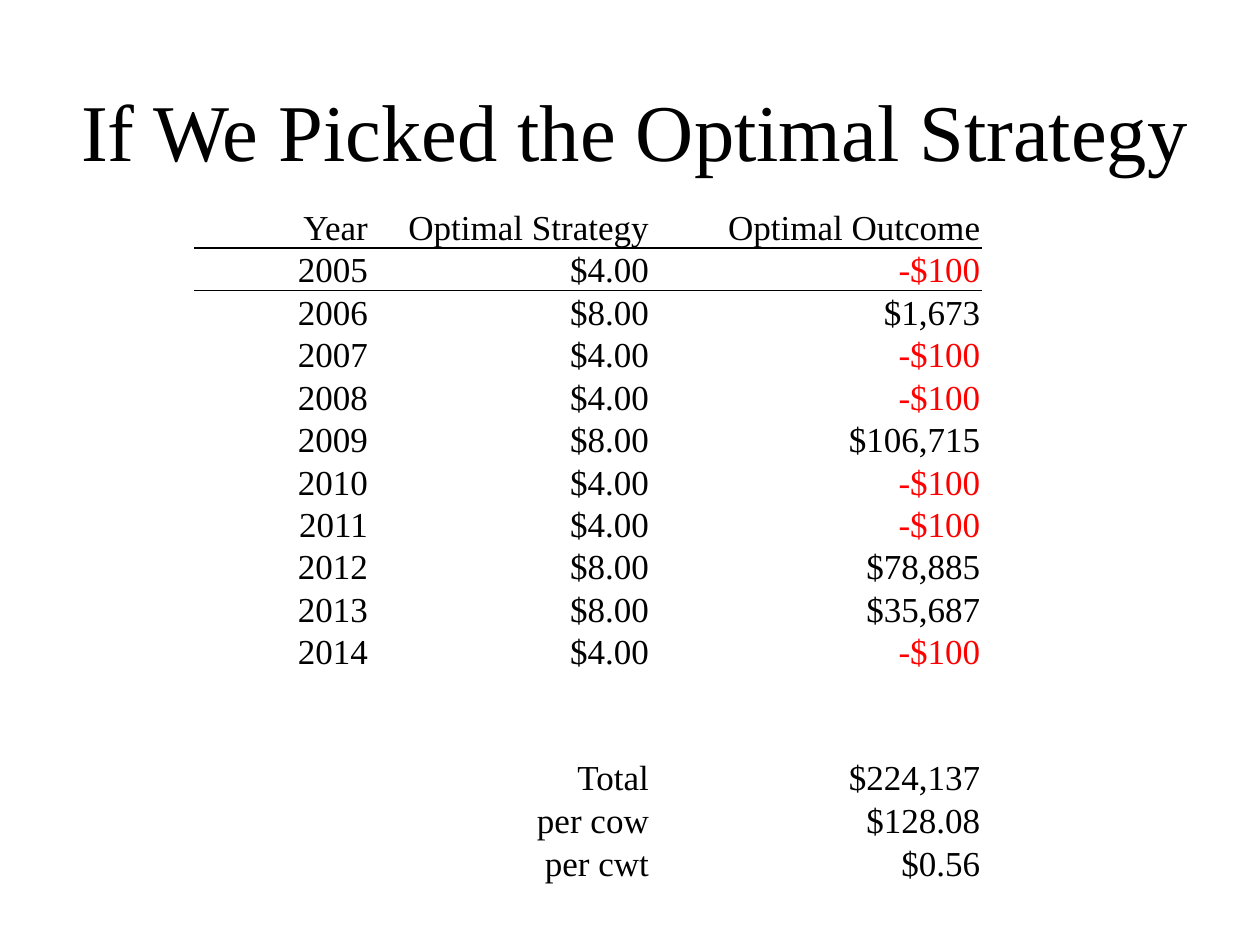
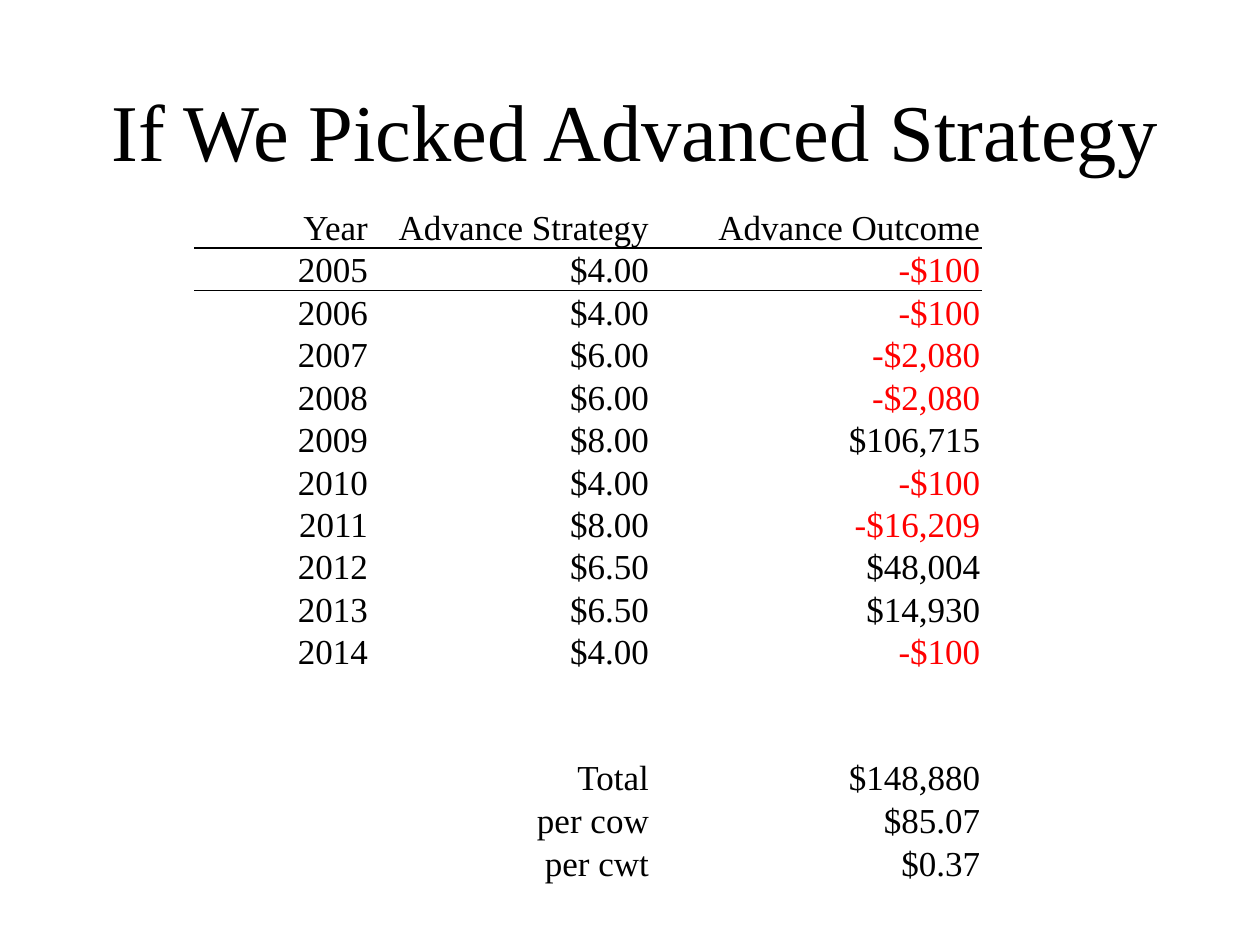
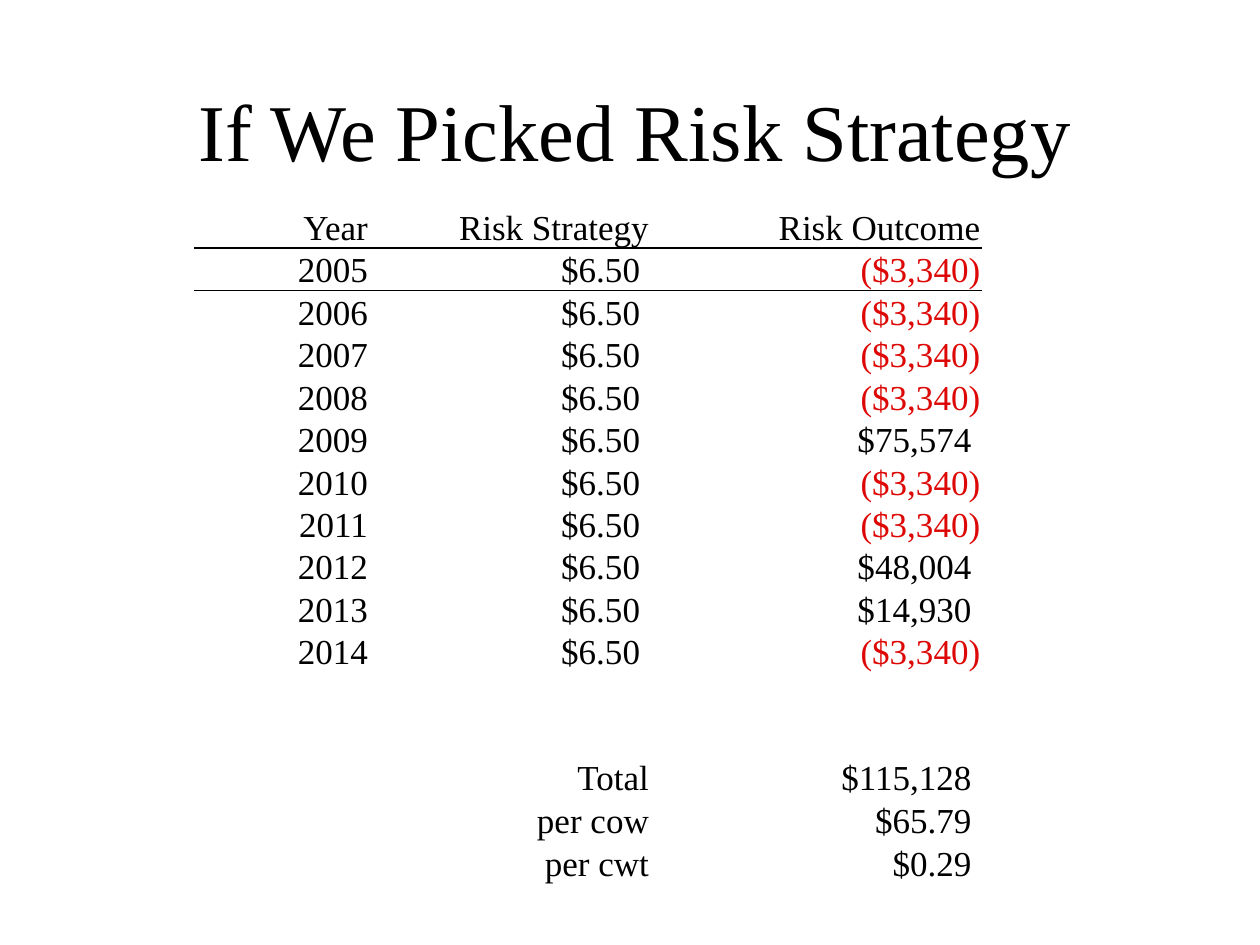
"""Build three slides that compare the yearly outcomes of pricing strategies."""
from dataclasses import dataclass

from lxml.etree import SubElement
from pptx import Presentation
from pptx.dml.color import RGBColor
from pptx.enum.text import MSO_ANCHOR as Anchor, PP_ALIGN as Align
from pptx.oxml.ns import qn
from pptx.slide import Slide
from pptx.table import _Cell as Cell
from pptx.text.text import _Paragraph as Paragraph
from pptx.util import Inches, Pt


@dataclass(frozen=True)
class Theme:
    font: str = "Times New Roman"
    ink: str = "000000"
    loss: str = "FF0000"
    accounting_loss: str = "DD0806"
    title_size: int = 46
    table_size: int = 20
    rule_width: int = 1
    plain_table_style: str = "{2D5ABB26-0587-4C30-8999-92F81FD0307C}"


@dataclass(frozen=True)
class Strategy:
    title: str
    name: str
    prices: tuple[float, ...]
    outcomes: tuple[int, ...]
    total: int
    per_cow: float
    per_cwt: float
    accounting: bool = False


@dataclass(frozen=True)
class Entry:
    text: str = ""
    color: str = Theme.ink
    padded: bool = False


THEME = Theme()
FIRST_YEAR = 2005
COLUMN_WIDTHS = (1.39, 2.23, 2.63)
ROW_HEIGHTS = (0.3,) * 11 + (0.33,) * 2 + (0.3,) + (0.34,) * 2
MARGINS = {
    "margin_left": Inches(0.01),
    "margin_right": Inches(0.01),
    "margin_top": Pt(0.25),
    "margin_bottom": Inches(0),
}
PADDED_RIGHT = Inches(0.08)

STRATEGIES = (
    Strategy(
        "If We Picked the Optimal Strategy", "Optimal",
        (4, 8, 4, 4, 8, 4, 4, 8, 8, 4),
        (-100, 1673, -100, -100, 106715, -100, -100, 78885, 35687, -100),
        224137, 128.08, 0.56,
    ),
    Strategy(
        "If We Picked Advanced Strategy", "Advance",
        (4, 4, 6, 6, 8, 4, 8, 6.5, 6.5, 4),
        (-100, -100, -2080, -2080, 106715, -100, -16209, 48004, 14930, -100),
        148880, 85.07, 0.37,
    ),
    Strategy(
        "If We Picked Risk Strategy", "Risk",
        (6.5,) * 10,
        (-3340, -3340, -3340, -3340, 75574, -3340, -3340, 48004, 14930, -3340),
        115128, 65.79, 0.29, accounting=True,
    ),
)


def write_text(paragraph: Paragraph, text: str, size: int, color: str, align: Align) -> None:
    """Add one aligned run in the theme font."""
    paragraph.alignment = align
    run = paragraph.add_run()
    run.text = text
    for name, value in {"name": THEME.font, "size": Pt(size)}.items():
        setattr(run.font, name, value)
    run.font.color.rgb = RGBColor.from_string(color)


def add_title(slide: Slide, text: str) -> None:
    """Add the centred slide title."""
    frame = slide.shapes.add_textbox(Inches(0.24), Inches(0.55), Inches(9.59), Inches(0.95)).text_frame
    for name, value in {"word_wrap": True, "vertical_anchor": Anchor.MIDDLE}.items():
        setattr(frame, name, value)
    write_text(frame.paragraphs[0], text, THEME.title_size, THEME.ink, Align.CENTER)


def money(value: float, decimals: int, strategy: Strategy) -> Entry:
    """Format an amount, with losses in red and in the strategy's own notation."""
    amount = f"${abs(value):,.{decimals}f}"
    if value >= 0:
        return Entry(amount, padded=strategy.accounting)
    if strategy.accounting:
        return Entry(f"({amount})", THEME.accounting_loss)
    return Entry(f"-{amount}", THEME.loss)


def table_rows(strategy: Strategy) -> list[list[Entry]]:
    """Lay out the header, the years, a gap and the totals."""
    header = [Entry("Year"), Entry(f"{strategy.name} Strategy"), Entry(f"{strategy.name} Outcome")]
    years = [
        [Entry(str(year)), money(price, 2, strategy), money(outcome, 0, strategy)]
        for year, (price, outcome) in enumerate(zip(strategy.prices, strategy.outcomes), FIRST_YEAR)
    ]
    gap = [[Entry()] * 3] * 2
    totals = [
        [Entry(), Entry(label), money(value, decimals, strategy)]
        for label, value, decimals in (
            ("Total", strategy.total, 0),
            ("per cow", strategy.per_cow, 2),
            ("per cwt", strategy.per_cwt, 2),
        )
    ]
    return [header, *years, *gap, *totals]


def add_border(cell: Cell, tag: str) -> None:
    """Draw a rule on one side of a cell."""
    properties = cell._tc.get_or_add_tcPr()
    line = SubElement(properties, qn(tag), w=str(Pt(THEME.rule_width)))
    fill = SubElement(line, qn("a:solidFill"))
    SubElement(fill, qn("a:srgbClr"), val=THEME.ink)
    properties.insert(0, line)


def fill_cell(cell: Cell, entry: Entry) -> None:
    """Format a cell and write its entry."""
    for name, value in MARGINS.items():
        setattr(cell, name, value)
    if entry.padded:
        cell.margin_right = PADDED_RIGHT
    cell.vertical_anchor = Anchor.BOTTOM
    cell.fill.background()
    if entry.text:
        write_text(cell.text_frame.paragraphs[0], entry.text, THEME.table_size, entry.color, Align.RIGHT)


def add_outcome_table(slide: Slide, strategy: Strategy) -> None:
    """Add the table of yearly prices and outcomes."""
    rows = table_rows(strategy)
    table = slide.shapes.add_table(
        len(rows), len(COLUMN_WIDTHS), Inches(1.54), Inches(1.63),
        Inches(sum(COLUMN_WIDTHS)), Inches(sum(ROW_HEIGHTS)),
    ).table
    for name in ("first_row", "horz_banding"):
        setattr(table, name, False)
    table._tbl.tblPr.find(qn("a:tableStyleId")).text = THEME.plain_table_style
    for column, width in zip(table.columns, COLUMN_WIDTHS):
        column.width = Inches(width)
    for row, height, entries in zip(table.rows, ROW_HEIGHTS, rows):
        row.height = Inches(height)
        for cell, entry in zip(row.cells, entries):
            fill_cell(cell, entry)
    for row_index, tag in enumerate(("a:lnB", "a:lnT")):
        for cell in table.rows[row_index].cells:
            add_border(cell, tag)


def main() -> None:
    """Build and save the presentation."""
    presentation = Presentation()
    presentation.slide_width, presentation.slide_height = Inches(10), Inches(7.5)
    for strategy in STRATEGIES:
        slide = presentation.slides.add_slide(presentation.slide_layouts[6])
        add_title(slide, strategy.title)
        add_outcome_table(slide, strategy)
    presentation.save("out.pptx")


if __name__ == "__main__":
    main()
